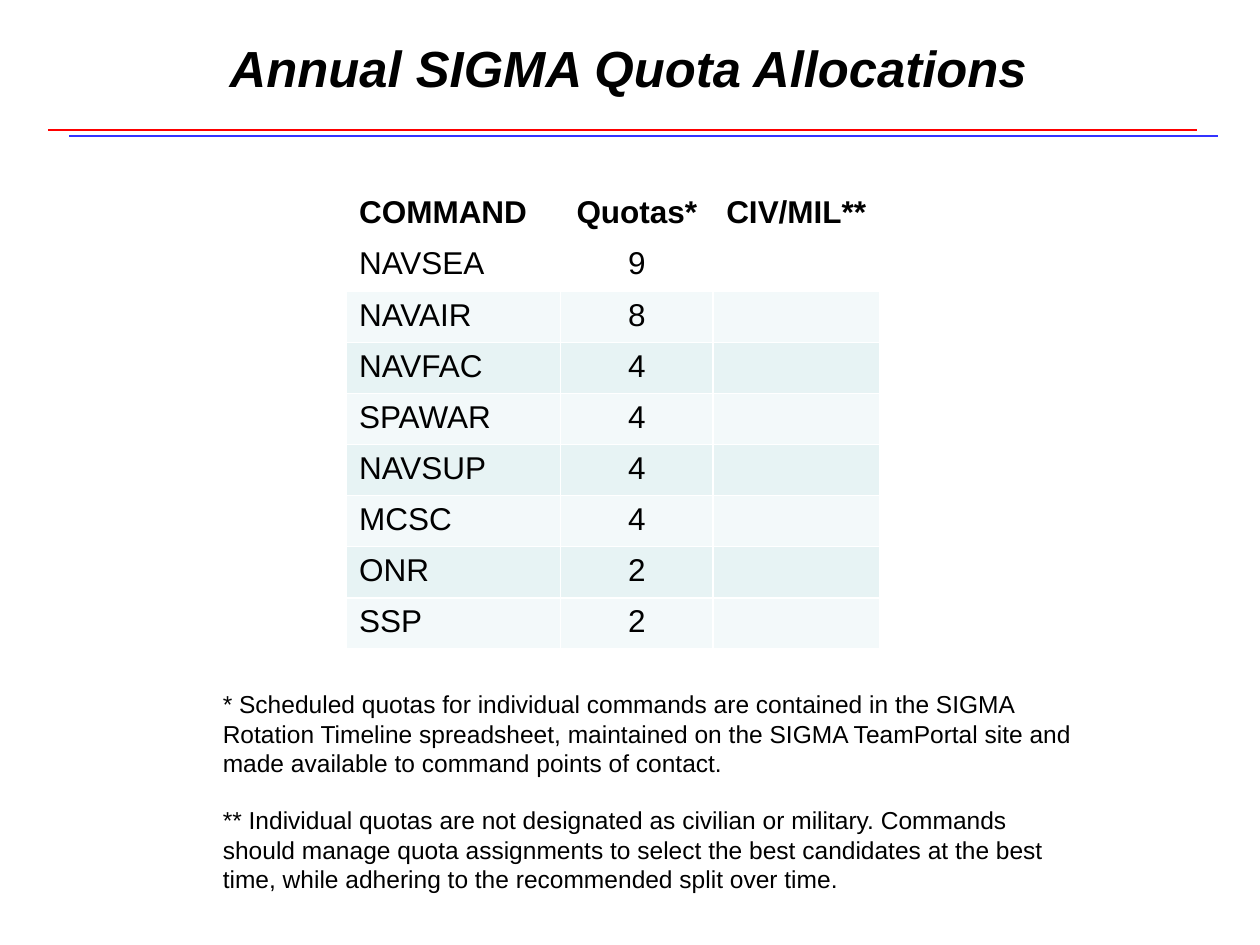
from lxml import etree
from pptx import Presentation
from pptx.dml.color import RGBColor
from pptx.enum import shapes, text
from pptx.oxml import ns
from pptx.util import Inches, Pt

FONT = "Arial"
BLACK, WHITE, RED, BLUE = "000000", "FFFFFF", "FF0000", "3333FF"
BANDS = ("E7F3F4", "F3F9FA")
HEADER = ("COMMAND", "Quotas*", "CIV/MIL**")
QUOTAS = (("NAVSEA", 9), ("NAVAIR", 8), ("NAVFAC", 4), ("SPAWAR", 4),
          ("NAVSUP", 4), ("MCSC", 4), ("ONR", 2), ("SSP", 2))
NOTES = (
    "* Scheduled quotas for individual commands are contained in the SIGMA "
    "Rotation Timeline spreadsheet, maintained on the SIGMA TeamPortal site "
    "and made available to command points of contact.",
    "** Individual quotas are not designated as civilian or military. "
    "Commands should manage quota assignments to select the best candidates "
    "at the best time, while adhering to the recommended split over time.",
)


def rgb(value):
    return RGBColor.from_string(value)


def format_text(p, size, align=text.PP_ALIGN.LEFT, **style):
    p.alignment = align
    p.font.color.rgb = rgb(BLACK)
    for name, value in {"name": FONT, "size": Pt(size), **style}.items():
        setattr(p.font, name, value)


def add_title(slide, left, top, width, height):
    title = slide.shapes.title
    box = {"left": left, "top": top, "width": width, "height": height}
    for name, value in box.items():
        setattr(title, name, Inches(value))
    tf = title.text_frame
    tf.text = "Annual SIGMA Quota Allocations"
    tf.vertical_anchor = text.MSO_ANCHOR.MIDDLE
    format_text(tf.paragraphs[0], 29, text.PP_ALIGN.CENTER, bold=True, italic=True)


def add_rules(slide, left, top, width):
    """Draw the red rule with its blue echo set off to the lower right."""
    for color, dx, dy in ((BLUE, 0.17, 0.05), (RED, 0, 0)):
        x, y = left + dx, top + dy
        line = slide.shapes.add_connector(
            shapes.MSO_CONNECTOR.STRAIGHT,
            Inches(x), Inches(y), Inches(x + width), Inches(y))
        line.line.color.rgb = rgb(color)
        line.line.width = Pt(1)
        etree.SubElement(line._element.spPr, ns.qn("a:effectLst"))


def set_borders(cell, bottom):
    tc_pr = cell._tc.get_or_add_tcPr()
    for side, width in (("L", 1), ("R", 1), ("T", 1), ("B", bottom)):
        ln = etree.SubElement(tc_pr, ns.qn(f"a:ln{side}"), w=str(Pt(width)))
        fill = etree.SubElement(ln, ns.qn("a:solidFill"))
        etree.SubElement(fill, ns.qn("a:srgbClr"), val=WHITE)


def add_quota_table(slide, left, top, widths, height):
    rows = [HEADER] + [(name, str(quota), "") for name, quota in QUOTAS]
    table = slide.shapes.add_table(
        len(rows), len(widths), Inches(left), Inches(top),
        Inches(sum(widths)), Inches(height)).table
    table.first_row = table.horz_banding = False
    for column, width in zip(table.columns, widths):
        column.width = Inches(width)
    for i, row in enumerate(rows):
        for j, value in enumerate(row):
            cell = table.cell(i, j)
            cell.text = value
            align = text.PP_ALIGN.CENTER if j else text.PP_ALIGN.LEFT
            format_text(cell.text_frame.paragraphs[0], 18, align, bold=i == 0)
            set_borders(cell, 1 if i else 3)
            if i < 2:
                cell.fill.background()
            else:
                cell.fill.solid()
                cell.fill.fore_color.rgb = rgb(BANDS[(i + 1) % 2])


def add_footnotes(slide, left, top, width, height):
    tf = slide.shapes.add_textbox(
        Inches(left), Inches(top), Inches(width), Inches(height)).text_frame
    tf.word_wrap = True
    for i, note in enumerate(NOTES):
        p = tf.add_paragraph() if i else tf.paragraphs[0]
        p.text = note
        format_text(p, 14)
        if i:
            p.space_before = Pt(16)


def main():
    prs = Presentation()
    prs.slide_width, prs.slide_height = Inches(10), Inches(7.5)
    slide = prs.slides.add_slide(prs.slide_layouts[5])
    add_rules(slide, 0.38, 1.03, 9.12)
    add_quota_table(slide, 2.75, 1.5, (1.7, 1.21, 1.32), 3.65)
    add_title(slide, 0.92, 0, 8.14, 1.07)
    add_footnotes(slide, 1.67, 5.42, 6.97, 1.75)
    prs.save("out.pptx")


if __name__ == "__main__":
    main()
